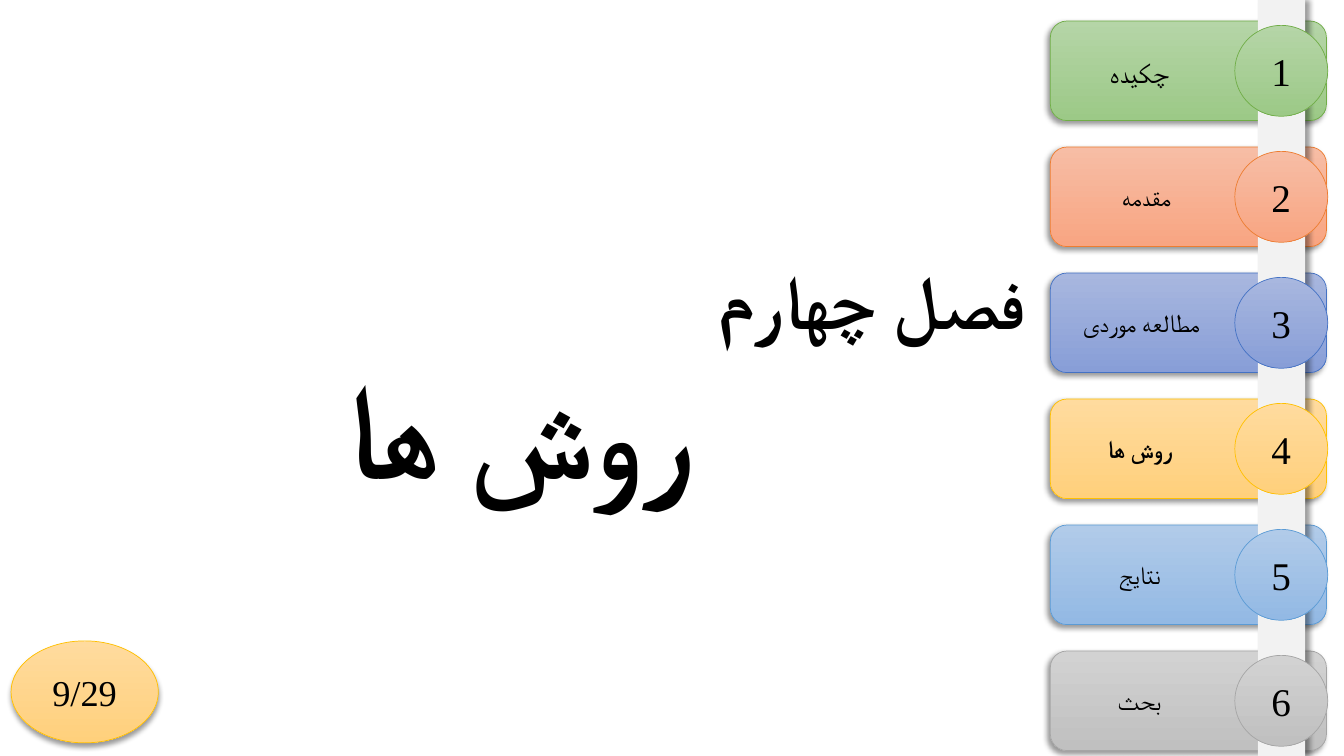
from dataclasses import dataclass

from lxml import etree
from pptx import Presentation
from pptx.dml.color import RGBColor
from pptx.enum.shapes import MSO_SHAPE
from pptx.enum.text import MSO_ANCHOR, MSO_AUTO_SIZE, PP_ALIGN
from pptx.oxml.ns import qn
from pptx.util import Cm, Pt

ROUNDED, RECT = MSO_SHAPE.ROUNDED_RECTANGLE, MSO_SHAPE.RECTANGLE
CIRCLE = MSO_SHAPE.FLOWCHART_CONNECTOR
MIDDLE = MSO_ANCHOR.MIDDLE
CENTER, RIGHT = PP_ALIGN.CENTER, PP_ALIGN.RIGHT

# Content: label, its left and width in cm
CHAPTERS = [
    ("چکیده", 26.85, 3.73),
    ("مقدمه", 26.57, 4.65),
    ("مطالعه موردی", 26.59, 4.35),
    ("روش ها", 26.49, 4.47),
    ("نتایج", 26.59, 4.29),
    ("بحث", 26.57, 4.29),
]
CURRENT = 3
HEADING = ("فصل چهارم", "روش ها")
PAGE = "9/29"


@dataclass(frozen=True)
class Theme:
    label_font: str = "Calibri"
    number_font: str = "Times New Roman"
    ink: str = "000000"
    rail: str = "F2F2F2"
    # gradient top, gradient bottom, outline
    tones: tuple = (
        ("B5D5A7", "9CC987", "70AD47"),
        ("F7BDA5", "F8A582", "ED7D31"),
        ("A8B7DF", "889ED7", "4472C4"),
        ("FFDB9E", "FFD07C", "FFC000"),
        ("B1CBE9", "93B9E4", "5B9BD5"),
        ("D2D2D2", "C0C0C0", "A5A5A5"),
    )
    chapter_size: int = 54
    title_size: int = 96
    first_label_size: int = 20
    label_size: int = 18
    number_size: int = 28
    page_size: int = 26


THEME = Theme()
SLIDE_W, SLIDE_H = 33.87, 19.05
STEP = SLIDE_H / len(CHAPTERS)


def add_shadow(sp, angle):
    effects = sp._element.spPr.find(qn("a:effectLst"))
    shadow = etree.SubElement(effects, qn("a:outerShdw"), blurRad=str(Pt(4)),
                              dist=str(Pt(3)), dir=str(angle * 60000),
                              algn="ctr", rotWithShape="0")
    color = etree.SubElement(shadow, qn("a:srgbClr"), val=THEME.ink)
    etree.SubElement(color, qn("a:alpha"), val="40000")


def add_block(s, kind, box, tone=None, shadow=None):
    sp = s.shapes.add_shape(kind, *map(Cm, box))
    sp.shadow.inherit = False
    if shadow is not None:
        add_shadow(sp, shadow)
    if tone is None:
        sp.fill.solid()
        sp.fill.fore_color.rgb = RGBColor.from_string(THEME.rail)
        sp.line.fill.background()
        return sp
    top, bottom, outline = tone
    sp.fill.gradient()
    sp.fill.gradient_angle = 270
    for stop, color, position in zip(sp.fill.gradient_stops, (top, bottom), (0, 1)):
        stop.color.rgb = RGBColor.from_string(color)
        stop.position = position
    sp.line.color.rgb = RGBColor.from_string(outline)
    sp.line.width = Pt(0.5)
    return sp


def format_text(p, size, font, align=CENTER, bold=False, rtl=False):
    p.alignment = align
    if rtl:
        p._p.get_or_add_pPr().set("rtl", "1")
    for r in p.runs:
        r.font.size, r.font.name, r.font.bold = Pt(size), font, bold
        r.font.color.rgb = RGBColor.from_string(THEME.ink)
        etree.SubElement(r._r.get_or_add_rPr(), qn("a:cs"), typeface=font)


def add_number(s, text, box, tone, size, shadow=None):
    sp = add_block(s, CIRCLE, box, tone, shadow)
    tf = sp.text_frame
    tf.text = text
    tf.vertical_anchor = MIDDLE
    format_text(tf.paragraphs[0], size, THEME.number_font)


def add_label(s, index, text, left, width):
    size = THEME.label_size if index else THEME.first_label_size
    box = (left, 1.27 + index * STEP, width, 1.02)
    tf = s.shapes.add_textbox(*map(Cm, box)).text_frame
    tf.word_wrap = True
    tf.text = text
    format_text(tf.paragraphs[0], size, THEME.label_font,
                bold=index == CURRENT, rtl=True)


def add_heading(s):
    title = s.shapes.title
    title.left, title.top, title.width, title.height = map(Cm, (0, 1.63, 26.11, 15.9))
    tf = title.text_frame
    tf.word_wrap = True
    tf.auto_size = MSO_AUTO_SIZE.NONE
    tf.vertical_anchor = MIDDLE
    tf.text = "\n".join(HEADING)
    chapter, name = tf.paragraphs
    format_text(chapter, THEME.chapter_size, THEME.label_font, RIGHT, True, True)
    format_text(name, THEME.title_size, THEME.label_font, CENTER, True, True)


def main():
    prs = Presentation()
    prs.slide_width, prs.slide_height = Cm(SLIDE_W), Cm(SLIDE_H)
    s = prs.slides.add_slide(prs.slide_layouts[5])
    add_heading(s)

    # Chapter bars with the rail over them
    for i, tone in enumerate(THEME.tones):
        add_block(s, ROUNDED, (26.47, 0.53 + i * STEP, 6.96, 2.51), tone, shadow=135)
    add_block(s, RECT, (31.96 - 0.26, 0, 1.19, SLIDE_H), shadow=0)

    # Chapter numbers and labels
    for i, (tone, chapter) in enumerate(zip(THEME.tones, CHAPTERS)):
        add_number(s, str(i + 1), (31.12, 0.64 + i * STEP, 2.34, 2.29),
                   tone, THEME.number_size)
        add_label(s, i, *chapter)

    # Page counter in the colour of the current chapter
    add_number(s, PAGE, (0.28, 16.15, 3.71, 2.57), THEME.tones[CURRENT],
               THEME.page_size, shadow=90)

    prs.save("out.pptx")


if __name__ == "__main__":
    main()
